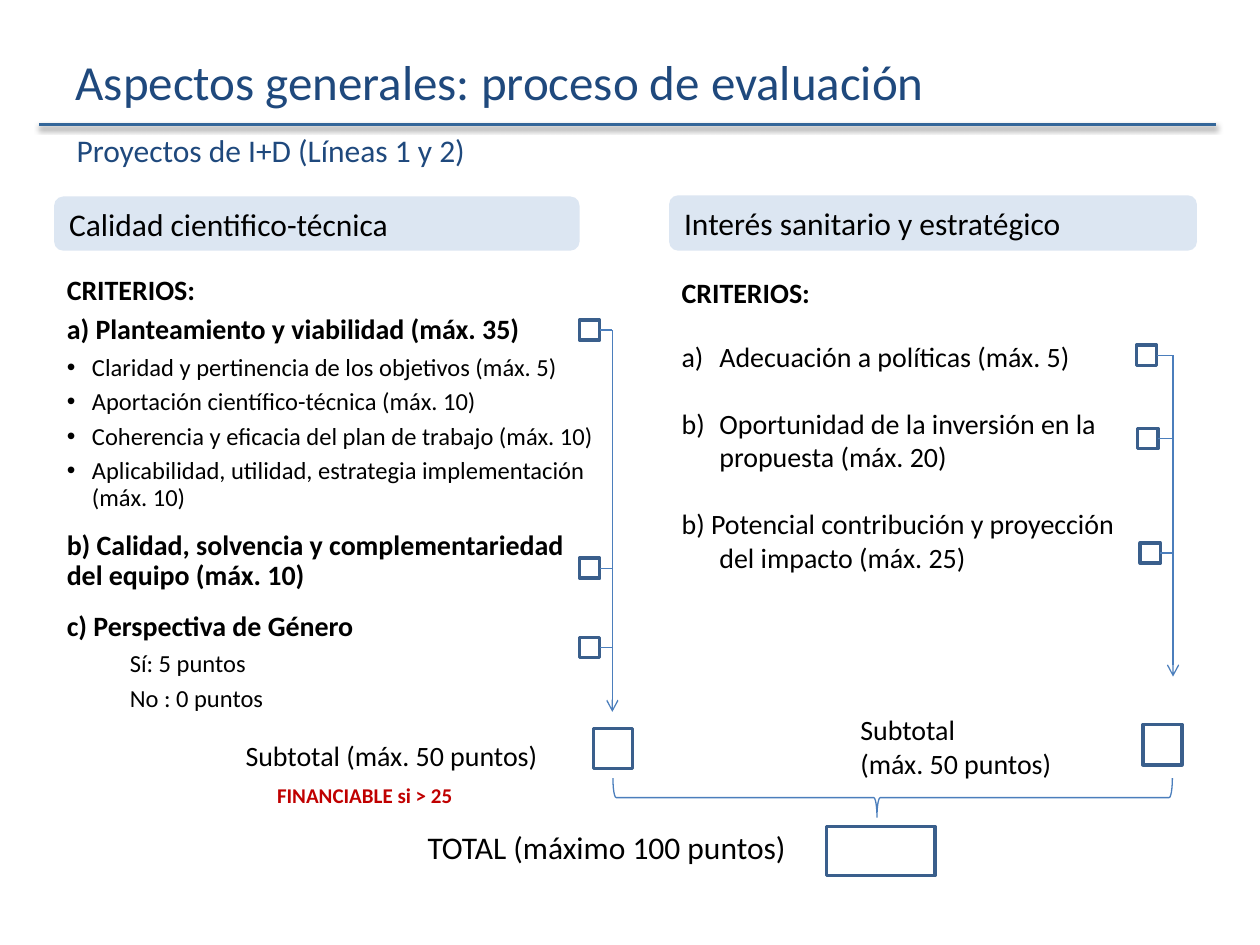
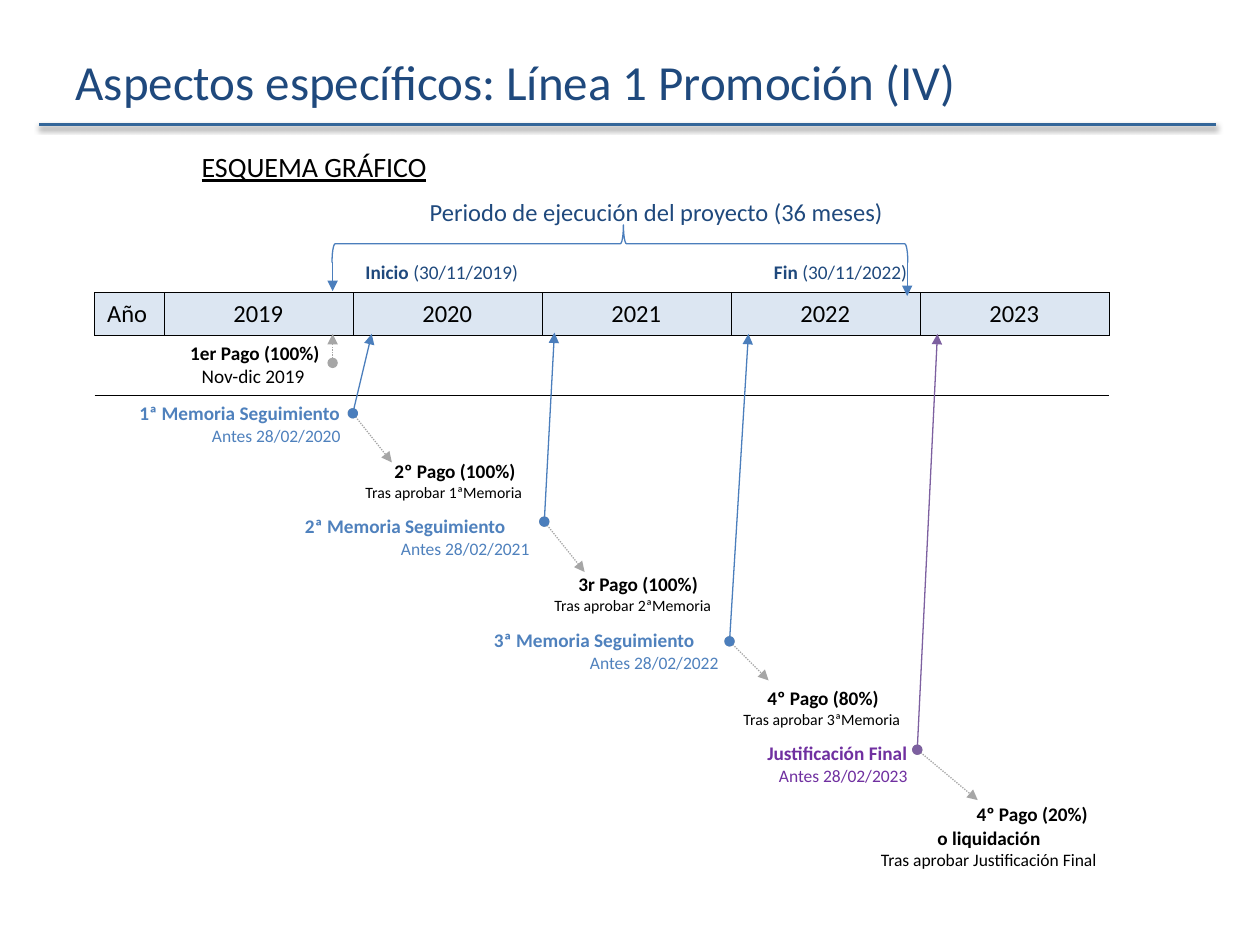
from dataclasses import dataclass

from lxml.etree import SubElement
from pptx import Presentation
from pptx.dml.color import RGBColor
from pptx.enum.dml import MSO_LINE
from pptx.enum.shapes import MSO_CONNECTOR, MSO_SHAPE
from pptx.enum.text import MSO_ANCHOR, MSO_AUTO_SIZE, PP_ALIGN
from pptx.oxml import parse_xml
from pptx.oxml.ns import nsdecls, qn
from pptx.util import Inches, Pt


@dataclass(frozen=True)
class Theme:
    """Colours, font and type sizes of the presentation."""
    font: str = "Calibri"
    navy: str = "1F497D"
    rule: str = "336699"
    box: str = "3A5F8C"
    line: str = "4B7EBC"
    report: str = "4F81BD"
    final: str = "7030A0"
    final_line: str = "7D60A0"
    payment_line: str = "A6A6A6"
    band: str = "DCE6F2"
    alert: str = "C00000"
    black: str = "000000"
    white: str = "FFFFFF"
    title: int = 28
    heading: int = 18
    body: int = 16
    detail: int = 14
    small: int = 12
    milestone: int = 11
    date: int = 10
    note: int = 9


THEME = Theme()
NO_GRID_STYLE = "{2D5ABB26-0587-4C30-8999-92F81FD0307C}"


def rgb(color):
    """Turn a hex string into a colour."""
    return RGBColor.from_string(color)


def write(frame, text, *, lead="", size=THEME.body, color=THEME.black, bold=False,
          underline=False, align=PP_ALIGN.LEFT, after=0, spacing=None,
          left=0, hanging=0, bullet=None, level=0):
    """Append a formatted paragraph, optionally opened by a bold lead."""
    paragraph = frame.paragraphs[0]
    if paragraph.runs:
        paragraph = frame.add_paragraph()
    properties = paragraph._p.get_or_add_pPr()
    properties.set("marL", str(Inches(left)))
    properties.set("indent", str(-Inches(hanging)))
    if bullet:
        SubElement(properties, qn("a:buFont"), typeface="Arial")
        SubElement(properties, qn("a:buChar"), char=bullet)
    else:
        SubElement(properties, qn("a:buNone"))
    paragraph.level = level
    paragraph.alignment = align
    paragraph.space_before = Pt(0)
    paragraph.space_after = Pt(after)
    if spacing:
        paragraph.line_spacing = spacing
    for content, strong in ((lead, True), (text, bold)):
        if content:
            run = paragraph.add_run()
            run.text = content
            run.font.name = THEME.font
            run.font.size = Pt(size)
            run.font.color.rgb = rgb(color)
            run.font.bold = strong
            run.font.underline = underline


def place(shape, left, top, width, height):
    """Move and size a placeholder, and return its text frame."""
    shape.left, shape.top = Inches(left), Inches(top)
    shape.width, shape.height = Inches(width), Inches(height)
    frame = shape.text_frame
    frame.word_wrap = True
    frame.auto_size = MSO_AUTO_SIZE.NONE
    return frame


def add_label(slide, text, bounds, anchor=MSO_ANCHOR.TOP, **text_format):
    """Add a text box with one paragraph per line of text."""
    frame = slide.shapes.add_textbox(*map(Inches, bounds)).text_frame
    frame.word_wrap = True
    frame.vertical_anchor = anchor
    for line in text.split("\n"):
        write(frame, line, **text_format)


def add_box(slide, *bounds):
    """Add an empty score box."""
    shape = slide.shapes.add_shape(MSO_SHAPE.RECTANGLE, *map(Inches, bounds))
    shape.shadow.inherit = False
    shape.fill.solid()
    shape.fill.fore_color.rgb = rgb(THEME.white)
    shape.line.color.rgb = rgb(THEME.box)
    shape.line.width = Pt(2)
    return shape


def add_band(slide, text, *bounds):
    """Add a rounded heading band."""
    shape = slide.shapes.add_shape(MSO_SHAPE.ROUNDED_RECTANGLE, *map(Inches, bounds))
    shape.shadow.inherit = False
    shape.fill.solid()
    shape.fill.fore_color.rgb = rgb(THEME.band)
    shape.line.fill.background()
    shape.text_frame.vertical_anchor = MSO_ANCHOR.MIDDLE
    write(shape.text_frame, text, size=THEME.heading)


def add_brace(slide, bounds, rotation, point):
    """Add a turned brace whose point lies at a share of its length."""
    shape = slide.shapes.add_shape(MSO_SHAPE.LEFT_BRACE, *map(Inches, bounds))
    shape.shadow.inherit = False
    shape.rotation = rotation
    shape.adjustments[0], shape.adjustments[1] = 0.083, point
    shape.fill.background()
    shape.line.color.rgb = rgb(THEME.line)
    shape.line.width = Pt(0.75)


def add_line(slide, start, end, color=THEME.line, width=0.75, dash=None, head=None, tail=None):
    """Add a straight connector with optional line ends."""
    connector = slide.shapes.add_connector(MSO_CONNECTOR.STRAIGHT, *map(Inches, (*start, *end)))
    connector.line.color.rgb = rgb(color)
    connector.line.width = Pt(width)
    if dash:
        connector.line.dash_style = dash
    properties = connector.element.spPr
    outline = properties.find(qn("a:ln"))
    for tag, kind in (("a:headEnd", head), ("a:tailEnd", tail)):
        if kind:
            SubElement(outline, qn(tag), type=kind)
    SubElement(properties, qn("a:effectLst"))
    return connector


def add_master_rule(presentation, slide):
    """Put the shadowed rule under the title on the slide master."""
    rule = add_line(slide, (0.31, 0.99), (9.65, 0.99), THEME.rule, 2)
    effects = rule.element.spPr.find(qn("a:effectLst"))
    effects.append(parse_xml(
        f'<a:outerShdw {nsdecls("a")} blurRad="{Pt(3.1)}" dist="{Pt(1.6)}" dir="5400000">'
        f'<a:srgbClr val="{THEME.black}"><a:alpha val="38000"/></a:srgbClr></a:outerShdw>'))
    presentation.slide_master.element.cSld.spTree.append(rule.element)


def new_slide(presentation, layout, title):
    """Add a slide and write its title."""
    slide = presentation.slides.add_slide(presentation.slide_layouts.get_by_name(layout))
    frame = place(slide.shapes.title, 0.5, 0.3, 9, 0.69)
    frame.vertical_anchor = MSO_ANCHOR.MIDDLE
    write(frame, title, size=THEME.title, color=THEME.navy)
    return slide


def add_score_track(slide, boxes, trunk, bottom):
    """Add check boxes joined to a vertical arrow."""
    side = 0.16
    for left, top in boxes:
        middle = top + side / 2
        box = add_box(slide, left, top, side, side)
        tick = add_line(slide, (left + side, middle), (trunk, middle))
        tick.begin_connect(box, 3)
    add_line(slide, (trunk, boxes[0][1] + side / 2), (trunk, bottom), tail="arrow")


def write_quality_criteria(frame):
    """Write the scientific criteria with their details."""
    heading = dict(bold=True, spacing=0.9)
    detail = dict(size=THEME.detail, spacing=0.9)
    write(frame, "CRITERIOS:", after=5.3, **heading)
    write(frame, "a) Planteamiento y viabilidad (máx. 35)", after=5.3, **heading)
    for text, after in (
            ("Claridad y pertinencia de los objetivos (máx. 5)", 4.6),
            ("Aportación científico-técnica (máx. 10)", 4.6),
            ("Coherencia y eficacia del plan de trabajo (máx. 10)", 4.6),
            ("Aplicabilidad, utilidad, estrategia implementación (máx. 10)", 11.5)):
        write(frame, text, after=after, left=0.2, hanging=0.2, bullet="•", **detail)
    write(frame, "b) Calidad, solvencia y complementariedad del equipo (máx. 10)", after=11.5, **heading)
    write(frame, "c) Perspectiva de Género", after=5.3, **heading)
    for text in ("Sí: 5 puntos", "No : 0 puntos"):
        write(frame, text, after=4.6, left=0.5, level=1, **detail)


def write_interest_criteria(frame):
    """Write the strategic criteria."""
    write(frame, "CRITERIOS:", bold=True, after=17)
    for text in ("a)\tAdecuación a políticas (máx. 5)",
                 "b)\tOportunidad de la inversión en la propuesta (máx. 20)",
                 "b) Potencial contribución y proyección del impacto (máx. 25)"):
        write(frame, text, after=19, left=0.3, hanging=0.3)


def build_evaluation(presentation):
    """Build the slide on the evaluation process."""
    slide = new_slide(presentation, "Two Content", "Aspectos generales: proceso de evaluación")
    add_master_rule(presentation, slide)
    add_label(slide, "Proyectos de I+D (Líneas 1 y 2)", (0.51, 0.99, 3.5, 0.4),
              size=THEME.heading, color=THEME.navy)
    add_band(slide, "Calidad cientifico-técnica", 0.43, 1.56, 4.17, 0.43)
    add_band(slide, "Interés sanitario y estratégico", 5.31, 1.55, 4.19, 0.44)
    write_quality_criteria(place(slide.placeholders[1], 0.43, 2.14, 4.42, 3.75))
    write_interest_criteria(place(slide.placeholders[2], 5.31, 2.14, 3.72, 3))
    add_score_track(slide, [(4.6, 2.54), (4.6, 4.43), (4.6, 5.06)], 4.86, 5.65)
    add_score_track(slide, [(9.02, 2.74), (9.03, 3.4), (9.05, 4.31)], 9.31, 5.37)
    add_label(slide, "Subtotal (máx. 50 puntos)", (1.85, 5.81, 2.98, 0.37))
    add_label(slide, "Subtotal\n(máx. 50 puntos)", (6.73, 5.61, 2.42, 0.64))
    add_box(slide, 4.71, 5.78, 0.31, 0.32)
    add_box(slide, 9.07, 5.75, 0.31, 0.32)
    add_label(slide, "FINANCIABLE si > 25", (1.54, 6.16, 2.71, 0.3), size=THEME.small,
              color=THEME.alert, bold=True, align=PP_ALIGN.CENTER)
    add_brace(slide, (6.93, 4.11, 0.31, 4.44), 270, 0.472)
    add_label(slide, "TOTAL (máximo 100 puntos)", (2.95, 6.47, 3.73, 0.51), MSO_ANCHOR.MIDDLE,
              size=THEME.heading, align=PP_ALIGN.CENTER)
    add_box(slide, 6.56, 6.56, 0.86, 0.39)


def set_borders(cell, sides):
    """Draw thin black borders on the given sides of a cell."""
    properties = cell._tc.get_or_add_tcPr()
    for side in sides:
        border = SubElement(properties, qn(f"a:ln{side}"), w=str(Pt(0.25)))
        fill = SubElement(border, qn("a:solidFill"))
        SubElement(fill, qn("a:srgbClr"), val=THEME.black)


def add_schedule_table(slide):
    """Add the table of years, reports and payments."""
    heights = [0.37, 0.5, 0.3, 0.34, 0.47, 0.46, 0.44, 0.46, 0.44, 0.46, 0.44, 0.48, 0.66]
    widths = [0.55] + [1.5] * 5
    graphic = slide.shapes.add_table(len(heights), len(widths), Inches(0.75), Inches(1.15),
                                     Inches(sum(widths)), Inches(sum(heights)))
    graphic.element.find(".//" + qn("a:tableStyleId")).text = NO_GRID_STYLE
    table = graphic.table
    table.first_row = table.horz_banding = False
    for row, height in zip(table.rows, heights):
        row.height = Inches(height)
    for column, width in zip(table.columns, widths):
        column.width = Inches(width)
    for row, first, last in ((0, 0, 5), (1, 0, 5), (2, 0, 1), (2, 3, 4),
                             (5, 0, 1), (7, 1, 2), (9, 2, 3), (12, 4, 5)):
        table.cell(row, first).merge(table.cell(row, last))
    for row, sides in ((2, "B"), (3, "LRTB"), (4, "T")):
        for column in range(len(widths)):
            set_borders(table.cell(row, column), sides)

    def put(row, column, text, **text_format):
        """Write one paragraph into a table cell."""
        write(table.cell(row, column).text_frame, text, **text_format)

    right = PP_ALIGN.RIGHT
    put(0, 0, "ESQUEMA GRÁFICO", underline=True, left=0.75)
    put(1, 0, "Periodo de ejecución del proyecto (36 meses)", size=THEME.detail,
        color=THEME.navy, left=2.56)
    put(2, 2, "(30/11/2019)", lead="Inicio ", size=THEME.milestone, color=THEME.navy)
    put(2, 3, "(30/11/2022)", lead="Fin ", size=THEME.milestone, color=THEME.navy, align=right)
    for column, text in enumerate(["Año", *map(str, range(2019, 2024))]):
        cell = table.cell(3, column)
        cell.fill.solid()
        cell.fill.fore_color.rgb = rgb(THEME.band)
        put(3, column, text, size=THEME.detail, align=PP_ALIGN.CENTER if column else PP_ALIGN.LEFT)

    put(4, 1, "1er Pago (100%)", size=THEME.milestone, bold=True, left=0.11)
    put(4, 1, "Nov-dic 2019", size=THEME.milestone, left=0.2)
    payments = (("2º Pago (100%)", 0.23), ("3r Pago (100%)", 0.19), ("4º Pago (80%)", 0.19))
    for index, (payment, indent) in enumerate(payments):
        row, number = 5 + 2 * index, index + 1
        report = dict(align=PP_ALIGN.LEFT, left=1.02) if index else dict(align=right)
        put(row, index, f"{number}ª Memoria Seguimiento", size=THEME.milestone,
            color=THEME.report, bold=True, **report)
        put(row, index, f"Antes 28/02/{2019 + number}", size=THEME.date, color=THEME.report, align=right)
        put(row + 1, index + 2, payment, size=THEME.milestone, bold=True, left=indent)
        put(row + 1, index + 2, f"Tras aprobar {number}ªMemoria", size=THEME.note)
    put(11, 4, "Justificación Final", size=THEME.milestone, color=THEME.final, bold=True, align=right)
    put(11, 4, "Antes 28/02/2023", size=THEME.date, color=THEME.final, align=right)
    put(12, 4, "4º Pago (20%)", size=THEME.milestone, bold=True, left=1.85)
    put(12, 4, "o liquidación", size=THEME.milestone, bold=True, left=1.54)
    put(12, 4, "Tras aprobar Justificación Final", size=THEME.date, align=right)
    for paragraph in graphic.element.iter(qn("a:p")):
        if paragraph.find(qn("a:r")) is None:
            SubElement(paragraph, qn("a:endParaRPr"), sz=str(THEME.note * 100))


def build_schedule(presentation):
    """Build the slide with the project schedule."""
    slide = new_slide(presentation, "Title Only", "Aspectos específicos: Línea 1 Promoción (IV)")
    add_schedule_table(slide)
    add_brace(slide, (4.77, -0.35, 0.3, 4.57), 90, 0.494)
    for x, bottom in ((2.64, 2.31), (7.2, 2.35)):
        add_line(slide, (x, 2.08), (x, bottom), tail="triangle")
    payment = dict(color=THEME.payment_line, dash=MSO_LINE.ROUND_DOT, head="oval", tail="triangle")
    add_line(slide, (2.64, 2.88), (2.64, 2.65), **payment)
    for start, paid, reported, color in (
            ((2.8, 3.28), (3.11, 3.67), (2.95, 2.65), THEME.line),
            ((4.32, 4.14), (4.64, 4.54), (4.4, 2.64), THEME.line),
            ((5.79, 5.09), (6.1, 5.4), (5.94, 2.65), THEME.line),
            ((7.28, 5.95), (7.76, 6.35), (7.44, 2.65), THEME.final_line)):
        add_line(slide, start, paid, **payment)
        add_line(slide, start, reported, color, head="oval", tail="triangle")


def main():
    """Build and save the presentation."""
    presentation = Presentation()
    presentation.slide_width, presentation.slide_height = Inches(10), Inches(7.5)
    build_evaluation(presentation)
    build_schedule(presentation)
    presentation.save("out.pptx")


if __name__ == "__main__":
    main()
